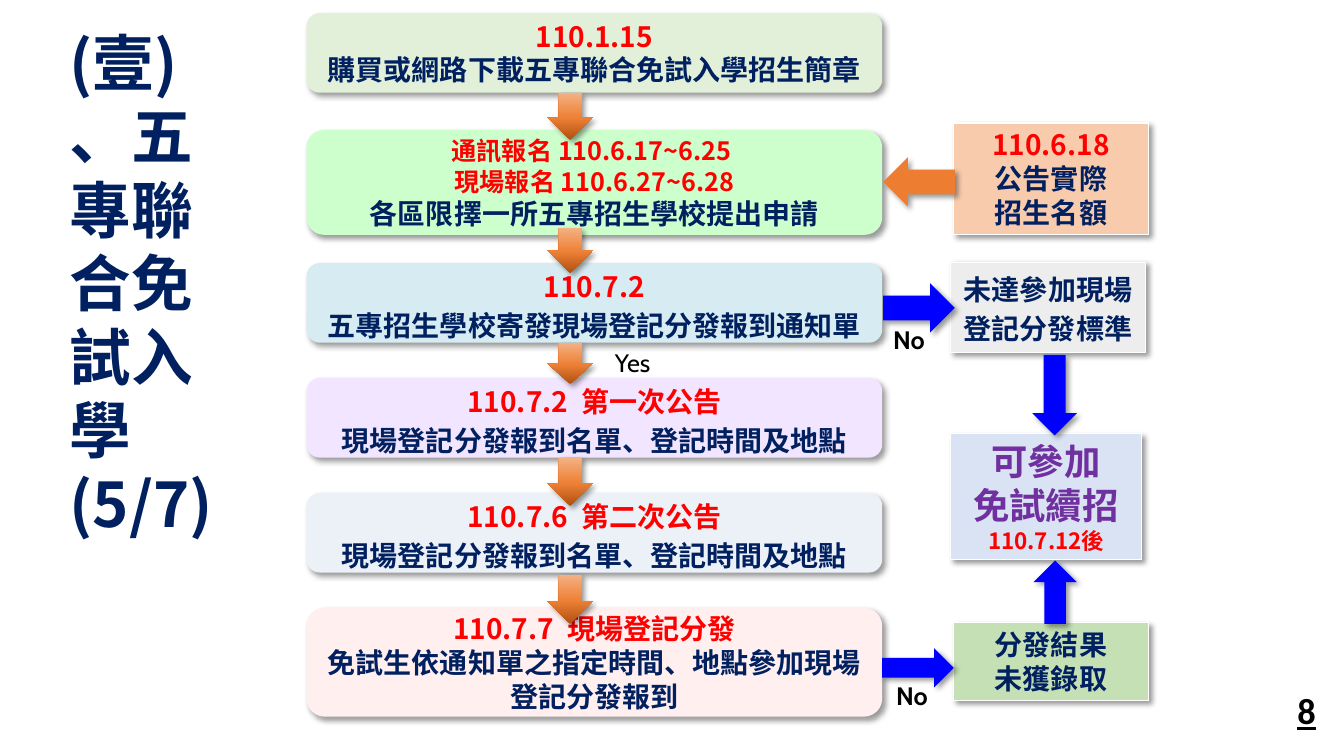
from lxml import etree
from pptx import Presentation
from pptx.dml.color import RGBColor
from pptx.enum.shapes import MSO_SHAPE
from pptx.enum.text import MSO_ANCHOR, PP_ALIGN
from pptx.oxml import parse_xml
from pptx.oxml.ns import nsdecls, qn
from pptx.util import Inches, Pt

ROUNDED = MSO_SHAPE.ROUNDED_RECTANGLE
RECTANGLE = MSO_SHAPE.RECTANGLE
DOWN_ARROW = MSO_SHAPE.DOWN_ARROW
TOP, MIDDLE = MSO_ANCHOR.TOP, MSO_ANCHOR.MIDDLE
LEFT, CENTER = PP_ALIGN.LEFT, PP_ALIGN.CENTER

CJK_FONT = "Noto Sans CJK SC"
RED = RGBColor(0xFF, 0x00, 0x00)
NAVY = RGBColor(0x00, 0x20, 0x60)
PURPLE = RGBColor(0x70, 0x30, 0xA0)
BLACK = RGBColor(0x00, 0x00, 0x00)
WHITE = RGBColor(0xFF, 0xFF, 0xFF)
BLUE = RGBColor(0x00, 0x00, 0xFF)
ORANGE = RGBColor(0xED, 0x7D, 0x31)
PALE_GREEN = RGBColor(0xE2, 0xF0, 0xD9)
MINT = RGBColor(0xCC, 0xFF, 0xCC)
PALE_CYAN = RGBColor(0xD6, 0xEC, 0xF2)
LAVENDER = RGBColor(0xF2, 0xE5, 0xFF)
ICE = RGBColor(0xEC, 0xF1, 0xF8)
ROSE = RGBColor(0xFF, 0xEF, 0xEF)
GREEN = RGBColor(0xC5, 0xE0, 0xB4)
PALE_BLUE = RGBColor(0xDA, 0xE3, 0xF3)
GREY = RGBColor(0xED, 0xED, 0xED)
PEACH = RGBColor(0xF8, 0xCB, 0xAD)

SHADOW = (
    f'<a:effectLst {nsdecls("a")}><a:outerShdw blurRad="50800" dist="38100" '
    'dir="2700000" algn="tl" rotWithShape="0"><a:srgbClr val="000000">'
    '<a:alpha val="40000"/></a:srgbClr></a:outerShdw></a:effectLst>'
)
GRADIENT_STOPS = (
    f'<a:gsLst {nsdecls("a")}><a:gs pos="0"><a:srgbClr val="B0500F"/></a:gs>'
    '<a:gs pos="48000"><a:srgbClr val="EE8137"/></a:gs>'
    '<a:gs pos="100000"><a:srgbClr val="F4B183"/></a:gs></a:gsLst>'
)


def add_block(kind, left, top, width, height, color, rotation=0):
    shape = slide.shapes.add_shape(
        kind, Inches(left), Inches(top), Inches(width), Inches(height))
    shape.rotation = rotation
    shape.fill.solid()
    shape.fill.fore_color.rgb = color
    shape.line.fill.background()
    properties = shape._element.spPr
    properties.append(parse_xml(SHADOW))
    return shape


def write_text(frame, lines, align=CENTER, font=CJK_FONT, bold=True):
    for number, (text, size, color, spacing) in enumerate(lines):
        paragraph = frame.add_paragraph() if number else frame.paragraphs[0]
        paragraph.alignment = align
        if spacing:
            paragraph.line_spacing = Pt(spacing)
        for part_number, part in enumerate(text.split("\n")):
            if part_number:
                paragraph.add_line_break()
            run = paragraph.add_run()
            run.text = part
            run.font.size = Pt(size)
            run.font.bold = bold
            run.font.name = font
            run.font.color.rgb = color
            east_asian = etree.Element(qn("a:ea"), typeface=font)
            run.font._element.find(qn("a:latin")).addnext(east_asian)


presentation = Presentation()
presentation.slide_width = Inches(13.33)
presentation.slide_height = Inches(7.5)
slide = presentation.slides.add_slide(presentation.slide_layouts[5])

title = slide.shapes.title
title.left, title.top = Inches(0.59), Inches(0.2)
title.width, title.height = Inches(1.71), Inches(4.31)
title.text_frame.vertical_anchor = TOP
title.text_frame.word_wrap = True
write_text(title.text_frame, [("(壹) 、五專聯合免試入學 (5/7)", 44, NAVY, 52.5)], LEFT)

STEPS = [
    (0.13, 0.79, PALE_GREEN, [
        ("110.1.15", 20, RED, 24),
        ("購買或網路下載五專聯合免試入學招生簡章", 20, NAVY, 24)]),
    (1.29, 1.04, MINT, [
        ("通訊報名 110.6.17~6.25 \n現場報名 110.6.27~6.28", 18, RED, 22),
        ("各區限擇一所五專招生學校提出申請", 20, NAVY, 24)]),
    (2.61, 0.79, PALE_CYAN, [
        ("110.7.2", 20, RED, 28),
        ("五專招生學校寄發現場登記分發報到通知單", 20, NAVY, 28)]),
    (3.75, 0.79, LAVENDER, [
        ("110.7.2  第一次公告", 20, RED, 28),
        ("現場登記分發報到名單、登記時間及地點", 20, NAVY, 28)]),
    (4.89, 0.79, ICE, [
        ("110.7.6  第二次公告", 20, RED, 28),
        ("現場登記分發報到名單、登記時間及地點", 20, NAVY, 28)]),
    (6.03, 1.08, ROSE, [
        ("110.7.7  現場登記分發", 20, RED, 24),
        ("免試生依通知單之指定時間、地點參加現場登記分發報到", 20, NAVY, 24)]),
]
for top, height, color, lines in STEPS:
    step = add_block(ROUNDED, 3.04, top, 5.71, height, color)
    step.text_frame.word_wrap = True
    step.text_frame.vertical_anchor = MIDDLE
    write_text(step.text_frame, lines)

OUTCOMES = [
    (9.46, 1.22, 1.93, 1.11, PEACH, [
        ("110.6.18", 20, RED, 24),
        ("公告實際", 20, NAVY, 24),
        ("招生名額", 20, NAVY, 24)]),
    (9.43, 2.6, 1.93, 0.9, GREY, [("未達參加現場登記分發標準", 20, NAVY, 28)]),
    (9.43, 4.3, 1.89, 1.25, PALE_BLUE, [
        ("可參加\n免試續招", 26, PURPLE, 31.5),
        ("110.7.12後", 16, RED, 19.5)]),
    (9.46, 6.18, 1.93, 0.77, GREEN, [("分發結果\n未獲錄取", 20, NAVY, 24)]),
]
for left, top, width, height, color, lines in OUTCOMES:
    outcome = add_block(RECTANGLE, left, top, width, height, color)
    outcome.line.color.rgb = WHITE
    outcome.line.width = Pt(0.75)
    outcome.text_frame.word_wrap = True
    outcome.text_frame.vertical_anchor = TOP
    write_text(outcome.text_frame, lines)

SIDE_ARROWS = [
    (8.87, 1.45, 0.49, 0.71, ORANGE, 90),
    (8.87, 2.7, 0.49, 0.71, BLUE, 270),
    (10.24, 3.52, 0.44, 0.8, BLUE, 0),
    (10.25, 5.56, 0.43, 0.63, BLUE, 180),
    (8.91, 6.27, 0.39, 0.71, BLUE, 270),
]
for arrow in SIDE_ARROWS:
    add_block(DOWN_ARROW, *arrow)

for top, height in [(0.92, 0.47), (2.26, 0.45), (3.4, 0.41), (4.54, 0.48), (5.7, 0.49)]:
    step_arrow = add_block(DOWN_ARROW, 5.43, top, 0.45, height, ORANGE)
    step_arrow.shadow.inherit = False
    step_arrow.fill.gradient()
    step_arrow.fill.gradient_angle = 90
    gradient = step_arrow._element.spPr.find(qn("a:gradFill"))
    gradient.replace(gradient.find(qn("a:gsLst")), parse_xml(GRADIENT_STOPS))

LABELS = [
    ("No", 8.76, 3.17, 0.55, 0.4, 18, "Cabin", True),
    ("No", 8.79, 6.7, 0.55, 0.4, 18, "Cabin", True),
    ("Yes", 6, 3.4, 0.58, 0.4, 18, "Cabin", False),
    ("8", 12.77, 6.78, 0.39, 0.54, 26, "Calibri", True),
]
for text, left, top, width, height, size, font, bold in LABELS:
    label = slide.shapes.add_textbox(
        Inches(left), Inches(top), Inches(width), Inches(height))
    label.text_frame.word_wrap = False
    write_text(label.text_frame, [(text, size, BLACK, None)], LEFT, font, bold)
label.text_frame.paragraphs[0].runs[0].font.underline = True

presentation.save("out.pptx")
